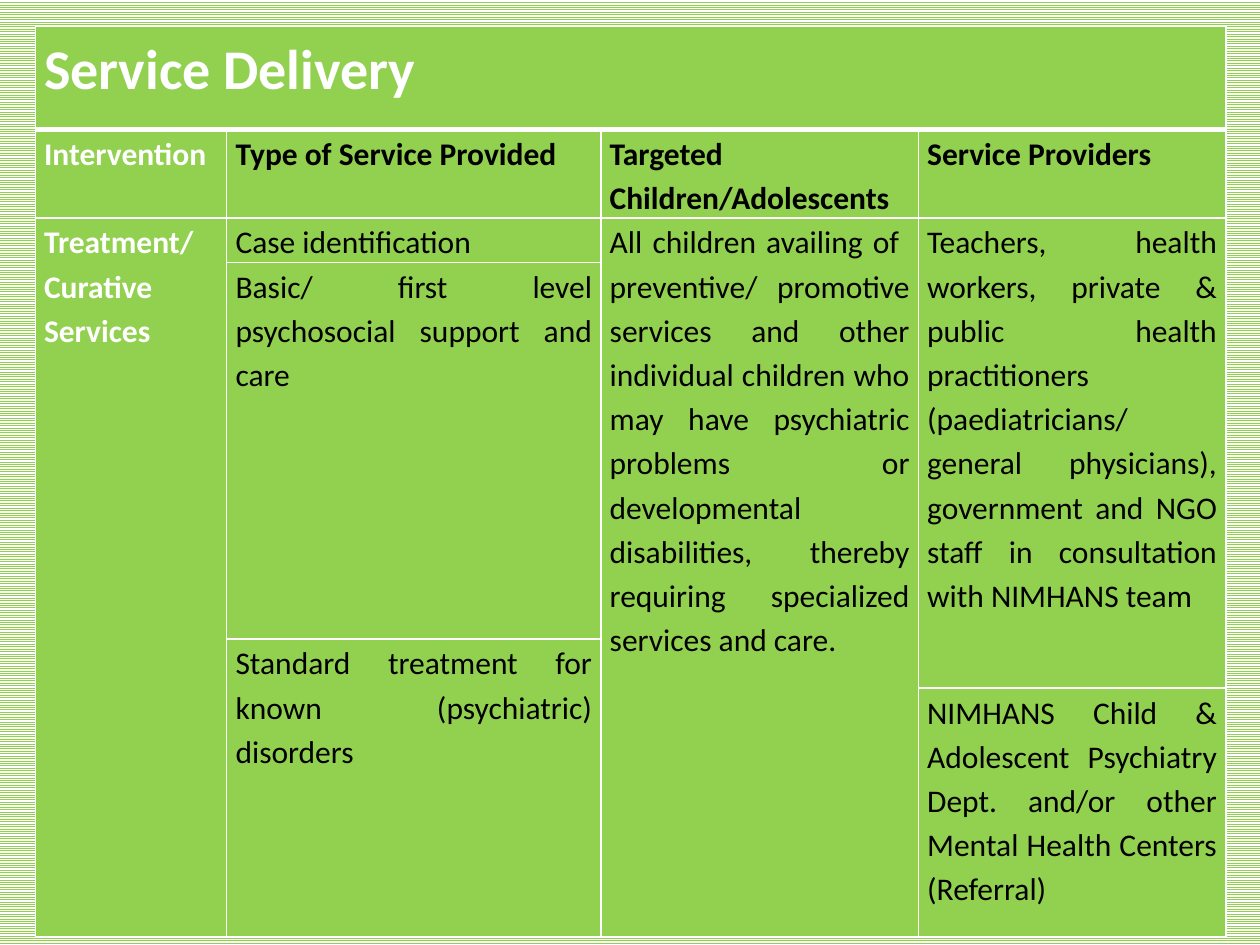
from dataclasses import dataclass

from lxml import etree
from pptx import Presentation
from pptx import util as u
from pptx.dml.color import RGBColor
from pptx.enum import dml, text
from pptx.oxml.ns import qn


@dataclass(frozen=True)
class Theme:
    font: str = "Calibri"
    green: str = "92D050"
    white: str = "FFFFFF"
    black: str = "000000"
    title: int = 32
    body: int = 18
    thin: int = 1
    thick: int = 3


@dataclass(frozen=True)
class Item:
    """A table cell: place in the grid, wording, span and look."""
    row: int
    col: int
    words: str
    rows: int = 1
    cols: int = 1
    bold: bool = False
    color: str = Theme.black
    size: int = Theme.body


T = Theme()
LEFT, TOP = 0.28, 0.21
COLS = [1.52, 2.97, 2.52, 2.44]
ROWS = [0.82, 0.66, 0.34, 2.99, 0.39, 1.97]

ITEMS = [
    Item(0, 0, "Service Delivery", cols=4, bold=True, color=T.white, size=T.title),
    Item(1, 0, "Intervention", bold=True, color=T.white),
    Item(1, 1, "Type of Service Provided", bold=True),
    Item(1, 2, "Targeted Children/Adolescents", bold=True),
    Item(1, 3, "Service Providers", bold=True),
    Item(2, 0, "Treatment/ Curative Services", rows=4, bold=True, color=T.white),
    Item(2, 1, "Case identification"),
    Item(3, 1, "Basic/ first level psychosocial support and care"),
    Item(4, 1, "Standard treatment for known (psychiatric) disorders", rows=2),
    Item(2, 2, "All children availing of  preventive/ promotive services and other "
               "individual children who may have psychiatric problems or developmental "
               "disabilities, thereby requiring specialized services and care.", rows=4),
    Item(2, 3, "Teachers, health workers, private & public health practitioners "
               "(paediatricians/ general physicians), government and NGO staff in "
               "consultation with NIMHANS team", rows=3),
    Item(5, 3, "NIMHANS Child & Adolescent Psychiatry Dept. and/or other Mental "
               "Health Centers (Referral)"),
]


def rgb(code: str) -> RGBColor:
    return RGBColor.from_string(code)


def write(frame, words: str, *, size: int, color: str, bold: bool) -> None:
    para = frame.paragraphs[0]
    para.alignment = text.PP_ALIGN.JUSTIFY
    para.line_spacing = 1.15
    run = para.add_run()
    run.text = words
    font = run.font
    font.name, font.size, font.bold = T.font, u.Pt(size), bold
    font.color.rgb = rgb(color)


def edge(cell, widths: dict[str, int]) -> None:
    """Add white borders; they must come before the fill in the XML."""
    props = cell._tc.get_or_add_tcPr()
    for spot, (side, width) in enumerate(widths.items()):
        line = etree.Element(qn(f"a:ln{side}"), w=str(u.Pt(width)))
        solid = etree.SubElement(line, qn("a:solidFill"))
        etree.SubElement(solid, qn("a:srgbClr"), val=T.white)
        props.insert(spot, line)


def style(cell, row: int) -> None:
    cell.margin_left = cell.margin_right = u.Inches(0.07)
    cell.margin_top = cell.margin_bottom = 0
    cell.fill.solid()
    cell.fill.fore_color.rgb = rgb(T.green)
    edge(cell, {"L": T.thin, "R": T.thin,
                "T": T.thick if row == 1 else T.thin,
                "B": T.thick if row == 0 else T.thin})


def place(table, item: Item) -> None:
    cell = table.cell(item.row, item.col)
    if item.rows * item.cols > 1:
        cell.merge(table.cell(item.row + item.rows - 1, item.col + item.cols - 1))
    write(cell.text_frame, item.words, size=item.size, color=item.color, bold=item.bold)


def main() -> None:
    deck = Presentation()
    deck.slide_width, deck.slide_height = u.Inches(10), u.Inches(7.5)
    slide = deck.slides.add_slide(deck.slide_layouts[6])

    back = slide.background.fill
    back.patterned()
    back.pattern = dml.MSO_PATTERN.NARROW_HORIZONTAL
    back.fore_color.rgb, back.back_color.rgb = rgb(T.green), rgb(T.white)

    box = [u.Inches(n) for n in (LEFT, TOP, sum(COLS), sum(ROWS))]
    table = slide.shapes.add_table(len(ROWS), len(COLS), *box).table
    for col, width in zip(table.columns, COLS):
        col.width = u.Inches(width)
    for num, (row, height) in enumerate(zip(table.rows, ROWS)):
        row.height = u.Inches(height)
        for cell in row.cells:
            style(cell, num)
    for item in ITEMS:
        place(table, item)

    deck.save("out.pptx")


if __name__ == "__main__":
    main()
